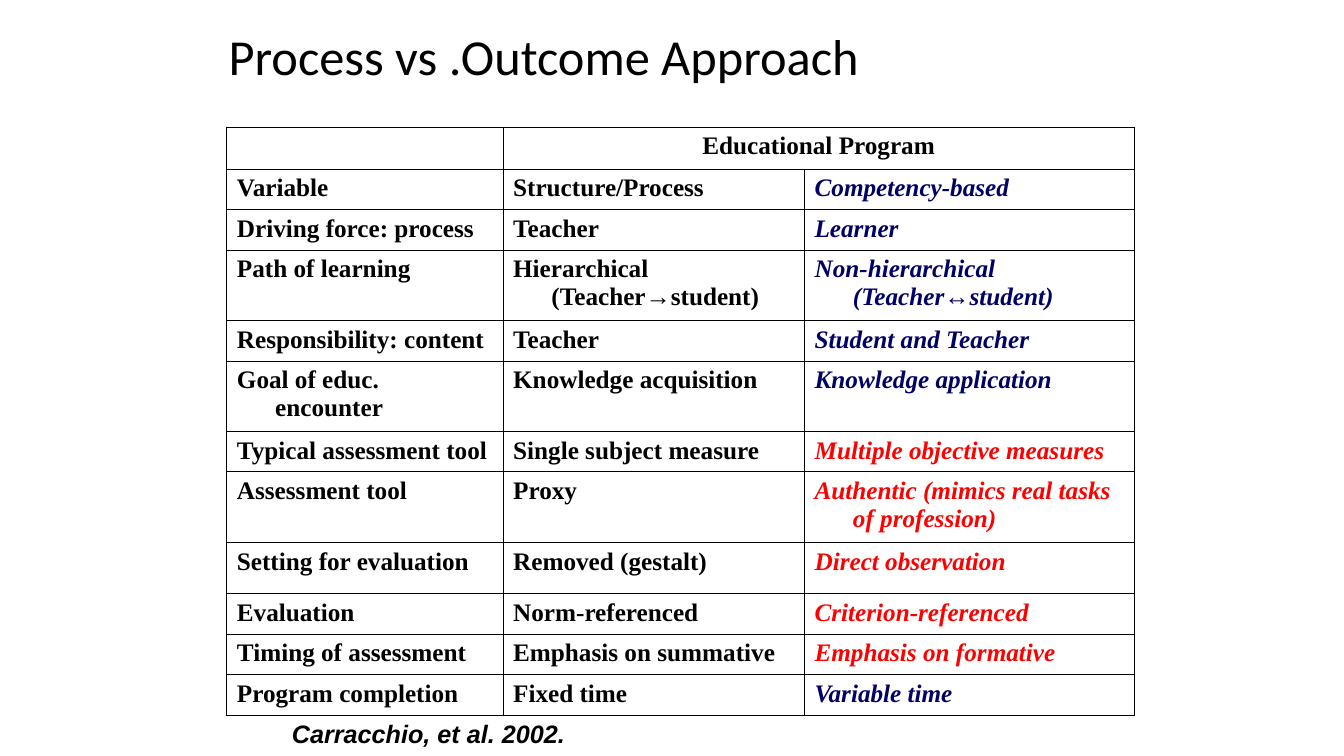
from lxml.etree import SubElement
from pptx import Presentation
from pptx.dml.color import RGBColor
from pptx.enum.text import MSO_ANCHOR as Anchor, PP_ALIGN as Align
from pptx.oxml.ns import qn
from pptx.util import Inches, Pt

BLACK, NAVY, RED = "000000", "000066", "FF0000"
COLUMN_WIDTHS = [2.74, 2.99, 3.27]
ROW_HEIGHTS = [0.42, 0.4, 0.4, 0.7, 0.4, 0.7, 0.4, 0.7, 0.51, 0.4, 0.4, 0.4]
COMPARISON = [
    ("Variable", "Structure/Process", "Competency-based", NAVY),
    ("Driving force: process", "Teacher", "Learner", NAVY),
    ("Path of learning", "Hierarchical (Teacher→student)",
     "Non-hierarchical (Teacher↔student)", NAVY),
    ("Responsibility: content", "Teacher", "Student and Teacher", NAVY),
    ("Goal of educ. encounter", "Knowledge acquisition", "Knowledge application", NAVY),
    ("Typical assessment tool", "Single subject measure", "Multiple objective measures", RED),
    ("Assessment tool", "Proxy", "Authentic (mimics real tasks of profession)", RED),
    ("Setting for evaluation", "Removed (gestalt)", "Direct observation", RED),
    ("Evaluation", "Norm-referenced", "Criterion-referenced", RED),
    ("Timing of assessment", "Emphasis on summative", "Emphasis on formative", RED),
    ("Program completion", "Fixed time", "Variable time", NAVY),
]


def color(value):
    return RGBColor.from_string(value)


def write(frame, text, font="Times New Roman", size=18, fill=BLACK, bold=True,
          italic=False, align=Align.LEFT, hanging=0, line_spacing=None):
    paragraph = frame.paragraphs[0]
    paragraph.alignment = align
    paragraph.line_spacing = line_spacing
    if hanging:
        properties = paragraph._p.get_or_add_pPr()
        properties.set("marL", str(Inches(hanging)))
        properties.set("indent", str(-Inches(hanging)))
    run = paragraph.add_run()
    run.text = text
    run.font.name, run.font.size = font, Pt(size)
    run.font.bold, run.font.italic = bold, italic
    run.font.color.rgb = color(fill)


class SlideBuilder:
    """Adds text boxes and ruled tables to one slide in a shared style."""

    def __init__(self, slide, border=BLACK):
        self.slide = slide
        self.border = border

    def text(self, text, left, top, width, height, anchor=Anchor.TOP, **style):
        box = self.slide.shapes.add_textbox(*map(Inches, (left, top, width, height)))
        box.text_frame.word_wrap = True
        box.text_frame.vertical_anchor = anchor
        write(box.text_frame, text, **style)

    def table(self, left, top, widths, heights):
        frame = self.slide.shapes.add_table(
            len(heights), len(widths),
            *map(Inches, (left, top, sum(widths), sum(heights))))
        table = frame.table
        table.first_row = table.horz_banding = False
        for column, width in zip(table.columns, widths):
            column.width = Inches(width)
        for row, height in zip(table.rows, heights):
            row.height = Inches(height)
        for cell in table.iter_cells():
            cell.margin_left = cell.margin_right = Inches(0.1)
            cell.margin_top = cell.margin_bottom = Inches(0.05)
            self.rule(cell)
            cell.fill.background()
        return table

    def rule(self, cell):
        properties = cell._tc.get_or_add_tcPr()
        for side, width in (("L", 1), ("R", 1), ("T", 0.75), ("B", 0.75)):
            line = SubElement(properties, qn(f"a:ln{side}"), w=str(Pt(width)))
            fill = SubElement(line, qn("a:solidFill"))
            SubElement(fill, qn("a:srgbClr"), val=self.border)


def main():
    presentation = Presentation()
    presentation.slide_width, presentation.slide_height = Inches(13.33), Inches(7.5)
    builder = SlideBuilder(presentation.slides.add_slide(presentation.slide_layouts[6]))

    builder.text("Process vs .Outcome Approach", 2.17, 0.25, 9, 0.67, Anchor.MIDDLE,
                 font="Calibri", size=36, bold=False, line_spacing=0.9)

    table = builder.table(2.25, 1.26, COLUMN_WIDTHS, ROW_HEIGHTS)
    table.cell(0, 1).merge(table.cell(0, 2))
    write(table.cell(0, 1).text_frame, "Educational Program", align=Align.CENTER, hanging=0.38)
    for row, (variable, process, competency, accent) in enumerate(COMPARISON, 1):
        write(table.cell(row, 0).text_frame, variable, hanging=0.38)
        write(table.cell(row, 1).text_frame, process, hanging=0.38)
        write(table.cell(row, 2).text_frame, competency, fill=accent, italic=True, hanging=0.38)

    builder.text("Carracchio, et al. 2002.", 2.25, 7.08, 4, 0.4,
                 font="Arial", italic=True, align=Align.CENTER)
    presentation.save("out.pptx")


if __name__ == "__main__":
    main()
